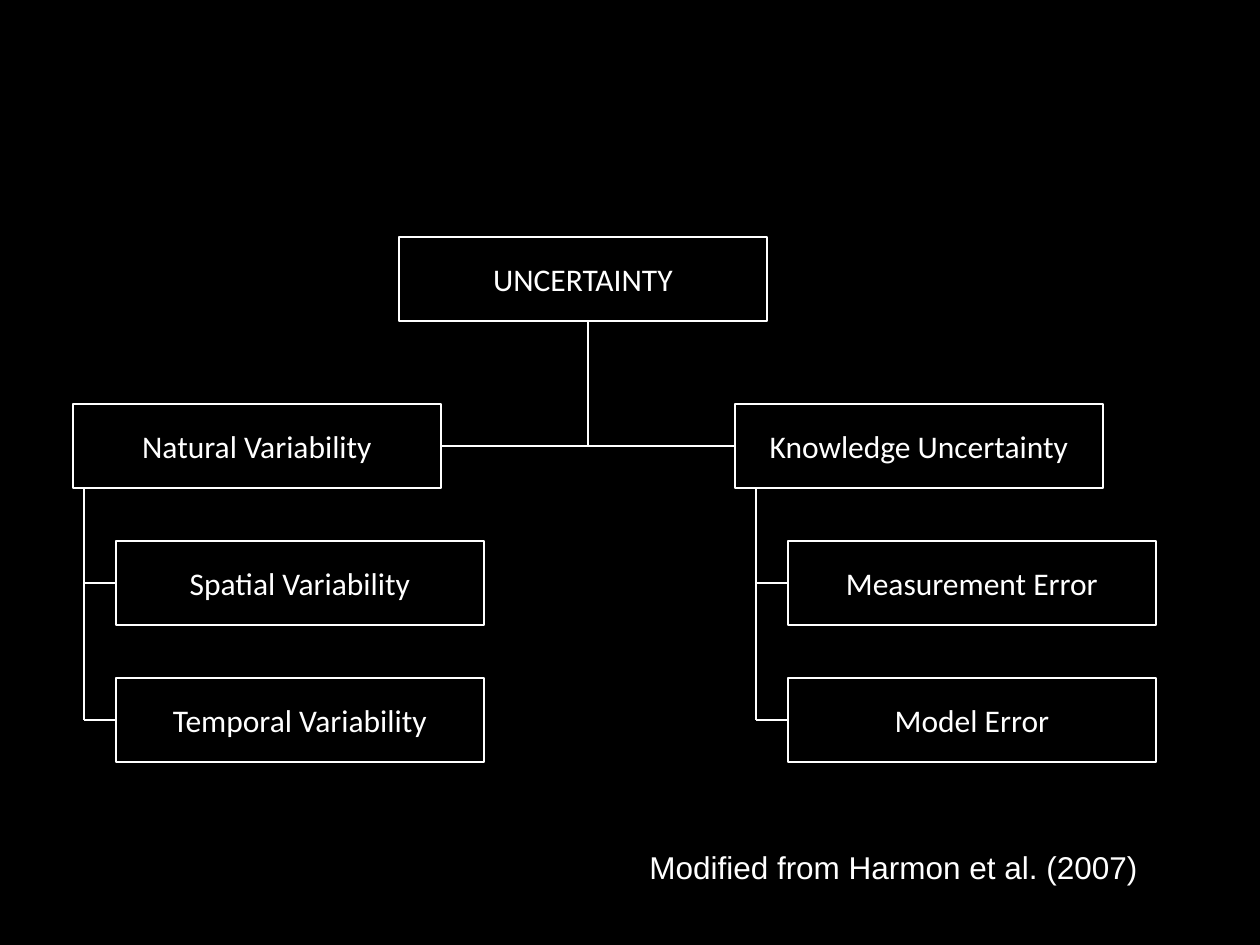
from dataclasses import dataclass
from typing import Optional

from lxml.etree import SubElement
from pptx import Presentation
from pptx.dml.color import RGBColor
from pptx.enum.shapes import MSO_CONNECTOR as Link, MSO_SHAPE as Preset
from pptx.enum.text import MSO_ANCHOR as Anchor, MSO_AUTO_SIZE as Fit, PP_ALIGN as Align
from pptx.oxml.ns import qn
from pptx.shapes.autoshape import Shape
from pptx.slide import Slide
from pptx.util import Emu, Pt

PX_PER_INCH = 126
COLOURS = {"background": "000000", "ink": "FFFFFF"}
BOX_WIDTH, BOX_HEIGHT = 368, 84
BRANCH_TOP, LEAF_TOP, LEAF_STEP = 404, 541, 137
LEAF_INDENT = 32
TRUNK_X = 588
LEFT_SIDE, RIGHT_SIDE = 1, 3


@dataclass(frozen=True)
class Branch:
    label: str
    left: int
    spine_x: int
    leaves: tuple[str, ...]


BRANCHES = (
    Branch("Natural Variability", 73, 84, ("Spatial Variability", "Temporal Variability")),
    Branch("Knowledge Uncertainty", 735, 756, ("Measurement Error", "Model Error")),
)


def px(length: int) -> Emu:
    return Emu(round(length * 914400 / PX_PER_INCH))


def colour(name: str) -> RGBColor:
    return RGBColor.from_string(COLOURS[name])


def write(box: Shape, text: str, font: str, align: Align) -> None:
    box.text_frame.word_wrap = False
    para = box.text_frame.paragraphs[0]
    para.alignment = align
    span = para.add_run()
    span.text = text
    span.font.name = font
    span.font.size = Pt(18)
    span.font.color.rgb = colour("ink")


def draw_box(page: Slide, text: str, left: int, top: int) -> Shape:
    box = page.shapes.add_shape(
        Preset.FLOWCHART_PROCESS, px(left), px(top), px(BOX_WIDTH), px(BOX_HEIGHT)
    )
    box.shadow.inherit = False
    box.fill.background()
    box.line.color.rgb = colour("ink")
    box.line.width = Pt(0.75)
    box.text_frame.vertical_anchor = Anchor.MIDDLE
    write(box, text, "Calibri", Align.CENTER)
    return box


def draw_line(
    page: Slide,
    start: tuple[int, int],
    end: tuple[int, int],
    begin_box: Optional[Shape] = None,
    end_box: Optional[Shape] = None,
) -> None:
    line = page.shapes.add_connector(Link.STRAIGHT, *map(px, start + end))
    line.line.color.rgb = colour("ink")
    line.line.width = Pt(0.75)
    SubElement(line._element.spPr, qn("a:effectLst"))
    if begin_box is not None:
        line.begin_connect(begin_box, RIGHT_SIDE)
    if end_box is not None:
        line.end_connect(end_box, LEFT_SIDE)


def draw_branch(page: Slide, branch: Branch) -> Shape:
    parent = draw_box(page, branch.label, branch.left, BRANCH_TOP)
    leaf_left = branch.spine_x + LEAF_INDENT
    middle = BRANCH_TOP + BOX_HEIGHT
    for index, label in enumerate(branch.leaves):
        top = LEAF_TOP + index * LEAF_STEP
        middle = top + BOX_HEIGHT // 2
        leaf = draw_box(page, label, leaf_left, top)
        draw_line(page, (branch.spine_x, middle), (leaf_left, middle), end_box=leaf)
    draw_line(page, (branch.spine_x, BRANCH_TOP + BOX_HEIGHT), (branch.spine_x, middle))
    return parent


def main() -> None:
    deck = Presentation()
    deck.slide_width, deck.slide_height = px(1260), px(945)
    page = deck.slides.add_slide(deck.slide_layouts[6])
    page.background.fill.solid()
    page.background.fill.fore_color.rgb = colour("background")

    credit = page.shapes.add_textbox(px(637), px(842), px(519), px(50))
    credit.text_frame.auto_size = Fit.SHAPE_TO_FIT_TEXT
    write(credit, "Modified from Harmon et al. (2007)", "Arial", Align.LEFT)

    root_top = 237
    branch_middle = BRANCH_TOP + BOX_HEIGHT // 2
    draw_box(page, "UNCERTAINTY", 399, root_top)
    draw_line(page, (TRUNK_X, root_top + BOX_HEIGHT), (TRUNK_X, branch_middle))
    natural, knowledge = [draw_branch(page, branch) for branch in BRANCHES]
    draw_line(
        page,
        (BRANCHES[0].left + BOX_WIDTH, branch_middle),
        (BRANCHES[1].left, branch_middle),
        natural,
        knowledge,
    )
    deck.save("out.pptx")


if __name__ == "__main__":
    main()
